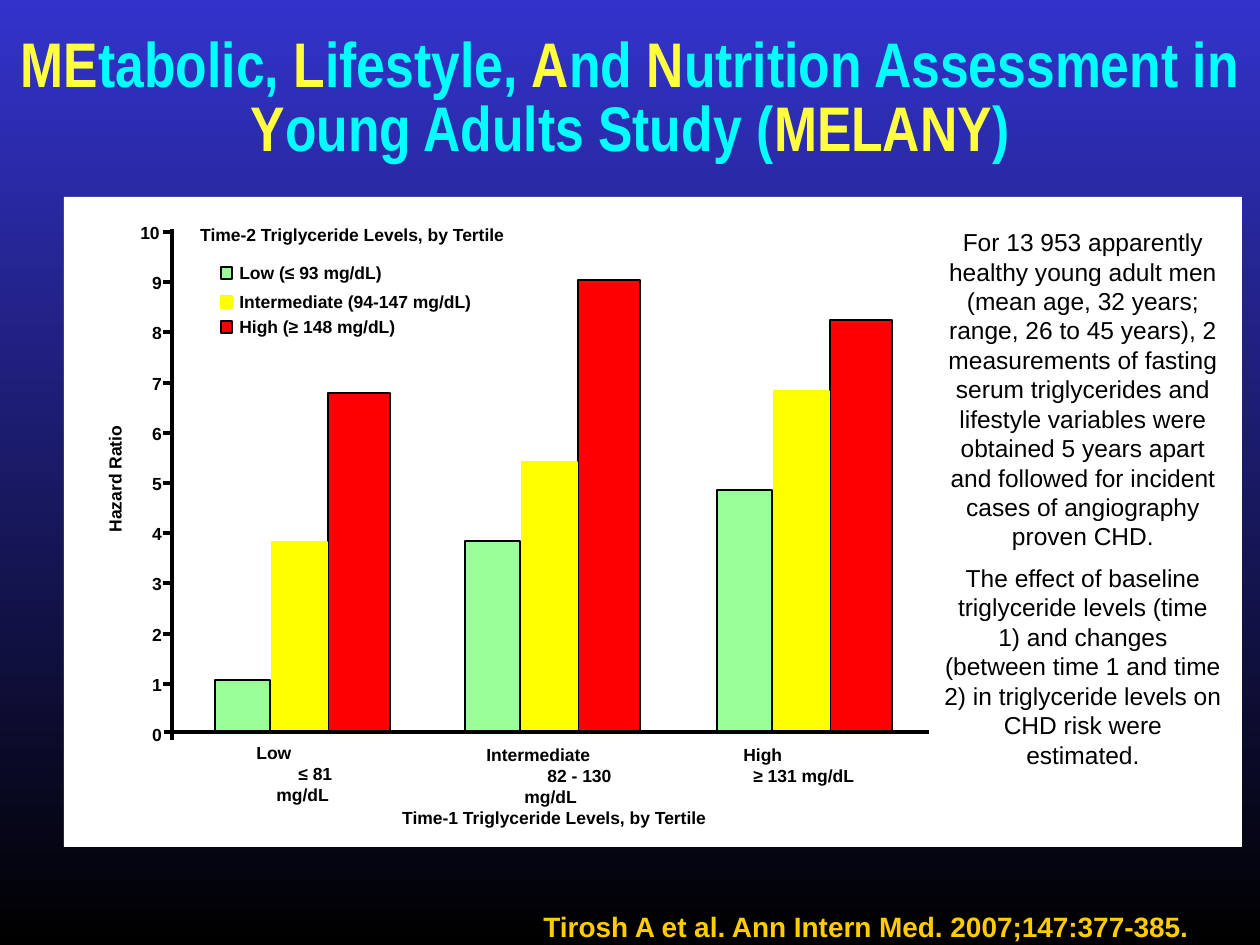
from pptx import Presentation
from pptx.dml.color import RGBColor
from pptx.enum.shapes import MSO_CONNECTOR, MSO_SHAPE
from pptx.enum.text import MSO_ANCHOR, MSO_AUTO_SIZE, PP_ALIGN
from pptx.oxml.ns import qn
from pptx.util import Emu, Pt
from lxml import etree

RECT = MSO_SHAPE.RECTANGLE
STRAIGHT = MSO_CONNECTOR.STRAIGHT
MIDDLE = MSO_ANCHOR.MIDDLE
NO_FIT = MSO_AUTO_SIZE.NONE
LEFT, CENTER = PP_ALIGN.LEFT, PP_ALIGN.CENTER

BLUE = RGBColor(0x33, 0x33, 0xCC)
BLACK = RGBColor(0x00, 0x00, 0x00)
WHITE = RGBColor(0xFF, 0xFF, 0xFF)
CYAN = RGBColor(0x00, 0xFF, 0xFF)
LEMON = RGBColor(0xFF, 0xFF, 0x40)
GOLD = RGBColor(0xFF, 0xCC, 0x00)
GREEN = RGBColor(0x99, 0xFF, 0x99)
YELLOW = RGBColor(0xFF, 0xFF, 0x00)
RED = RGBColor(0xFF, 0x00, 0x00)

TITLE = [
    ("ME", LEMON), ("tabolic, ", CYAN), ("L", LEMON), ("ifestyle, ", CYAN),
    ("A", LEMON), ("nd ", CYAN), ("N", LEMON),
    ("utrition Assessment in ", CYAN), ("Y", LEMON),
    ("oung Adults Study (", CYAN), ("MELANY", LEMON), (")", CYAN),
]
NOTES = [
    "For 13 953 apparently healthy young adult men (mean age, 32 years; "
    "range, 26 to 45 years), 2 measurements of fasting serum triglycerides "
    "and lifestyle variables were obtained 5 years apart and followed for "
    "incident cases of angiography proven CHD.",
    "The effect of baseline triglyceride levels (time 1) and changes "
    "(between time 1 and time 2) in triglyceride levels on CHD risk were "
    "estimated.",
]
BASELINE = 731
GROUP_LEFTS = (215, 465, 717)
# name, fill, outline, offset in group, bar width, bar tops, legend top
SERIES = [
    ("Low (≤ 93 mg/dL)", GREEN, BLACK, 0, 55, (680, 541, 490), 256),
    ("Intermediate (94-147 mg/dL)", YELLOW, YELLOW, 57, 55, (542, 462, 391), 285),
    ("High (≥ 148 mg/dL)", RED, BLACK, 113, 62, (393, 280, 320), 310),
]
CATEGORIES = [
    (243, 736, 121, [("Low", 1), ("≤ 81", 43), ("mg/dL", 21)]),
    (472, 738, 156, [("Intermediate", 2), ("82 - 130", 63), ("mg/dL", 40)]),
    (726, 738, 156, [("High", 5), ("≥ 131 mg/dL", 15)]),
]


def px(n):
    return Emu(round(n * 914400 / 126))


class Deck:
    """Slide under construction together with its drawing style."""

    def __init__(self, prs, font="Arial", narrow="Arial Narrow"):
        self.font, self.narrow = font, narrow
        self.s = prs.slides.add_slide(prs.slide_layouts[5])

    def background(self, top, bottom):
        fill = self.s.background.fill
        fill.gradient()
        fill.gradient_angle = 270
        for stop, color, pos in zip(fill.gradient_stops, (top, bottom), (0, 1)):
            stop.color.rgb = color
            stop.position = pos

    def run(self, p, text, size, color, bold, font=None):
        r = p.add_run()
        r.text = text
        r.font.name = font or self.font
        r.font.size = Pt(size)
        r.font.bold = bold
        r.font.color.rgb = color

    def title(self, x, y, w, h, runs):
        sp = self.s.shapes.title
        sp.left, sp.top, sp.width, sp.height = map(px, (x, y, w, h))
        tf = sp.text_frame
        tf.auto_size = NO_FIT
        tf.vertical_anchor = MIDDLE
        p = tf.paragraphs[0]
        p.alignment = CENTER
        p.line_spacing = 0.85
        for text, color in runs:
            self.run(p, text, 36, color, True, self.narrow)

    def text(self, x, y, w, h, lines, size=10, color=BLACK, bold=True,
             align=CENTER, gap=0, rotation=0):
        sp = self.s.shapes.add_textbox(*map(px, (x, y, w, h)))
        sp.rotation = rotation
        tf = sp.text_frame
        tf.word_wrap = True
        for i, (line, indent) in enumerate(lines):
            p = tf.add_paragraph() if i else tf.paragraphs[0]
            p.alignment = align
            p.space_before = Pt(gap if i else 0)
            if indent:
                p._p.get_or_add_pPr().set("marL", str(px(indent)))
            self.run(p, line, size, color, bold)

    def label(self, x, y, w, text, **style):
        self.text(x, y, w, 34, [(text, 0)], **style)

    def rect(self, x, y, w, h, fill, line=None):
        sp = self.s.shapes.add_shape(RECT, *map(px, (x, y, w, h)))
        sp.shadow.inherit = False
        sp.fill.solid()
        sp.fill.fore_color.rgb = fill
        if line is None:
            sp.line.fill.background()
        else:
            sp.line.color.rgb = line
            sp.line.width = Pt(1)

    def line(self, x1, y1, x2, y2):
        c = self.s.shapes.add_connector(STRAIGHT, *map(px, (x1, y1, x2, y2)))
        c.line.color.rgb = BLACK
        c.line.width = Pt(2.25)
        etree.SubElement(c._element.spPr, qn("a:effectLst"))


def main():
    prs = Presentation()
    prs.slide_width, prs.slide_height = px(1260), px(945)
    deck = Deck(prs)
    deck.background(BLUE, BLACK)
    deck.rect(64, 197, 1178, 650, WHITE)
    deck.title(0, 21, 1260, 158, TITLE)
    deck.label(472, 903, 788, "Tirosh A et al. Ann Intern Med. 2007;147:377-385.",
               size=16, color=GOLD)

    deck.line(172, 229, 172, 740)
    for value in range(11):
        y = round(734 - 50.2 * value)
        if value:
            deck.line(163, y, 172, y)
        x, w = (125, 50) if value == 10 else (137, 40)
        deck.label(x, y - 16, w, str(value))

    for name, fill, outline, offset, width, tops, legend_top in reversed(SERIES):
        for left, top in zip(GROUP_LEFTS, tops):
            deck.rect(left + offset, top, width, BASELINE - top, fill, outline)
        deck.label(227, legend_top, 318, name, align=LEFT)
        deck.rect(221, legend_top + 11, 11, 12, fill, outline)
    deck.line(164, 732, 929, 732)

    for x, y, w, lines in CATEGORIES:
        deck.text(x, y, w, 55, lines, align=LEFT)
    deck.label(370, 801, 368, "Time-1 Triglyceride Levels, by Tertile")
    deck.label(168, 218, 368, "Time-2 Triglyceride Levels, by Tertile")
    deck.label(20, 462, 190, "Hazard Ratio", rotation=270)
    deck.text(932, 221, 302, 598, [(note, 0) for note in NOTES],
              size=14, bold=False, gap=7)
    prs.save("out.pptx")


if __name__ == "__main__":
    main()
